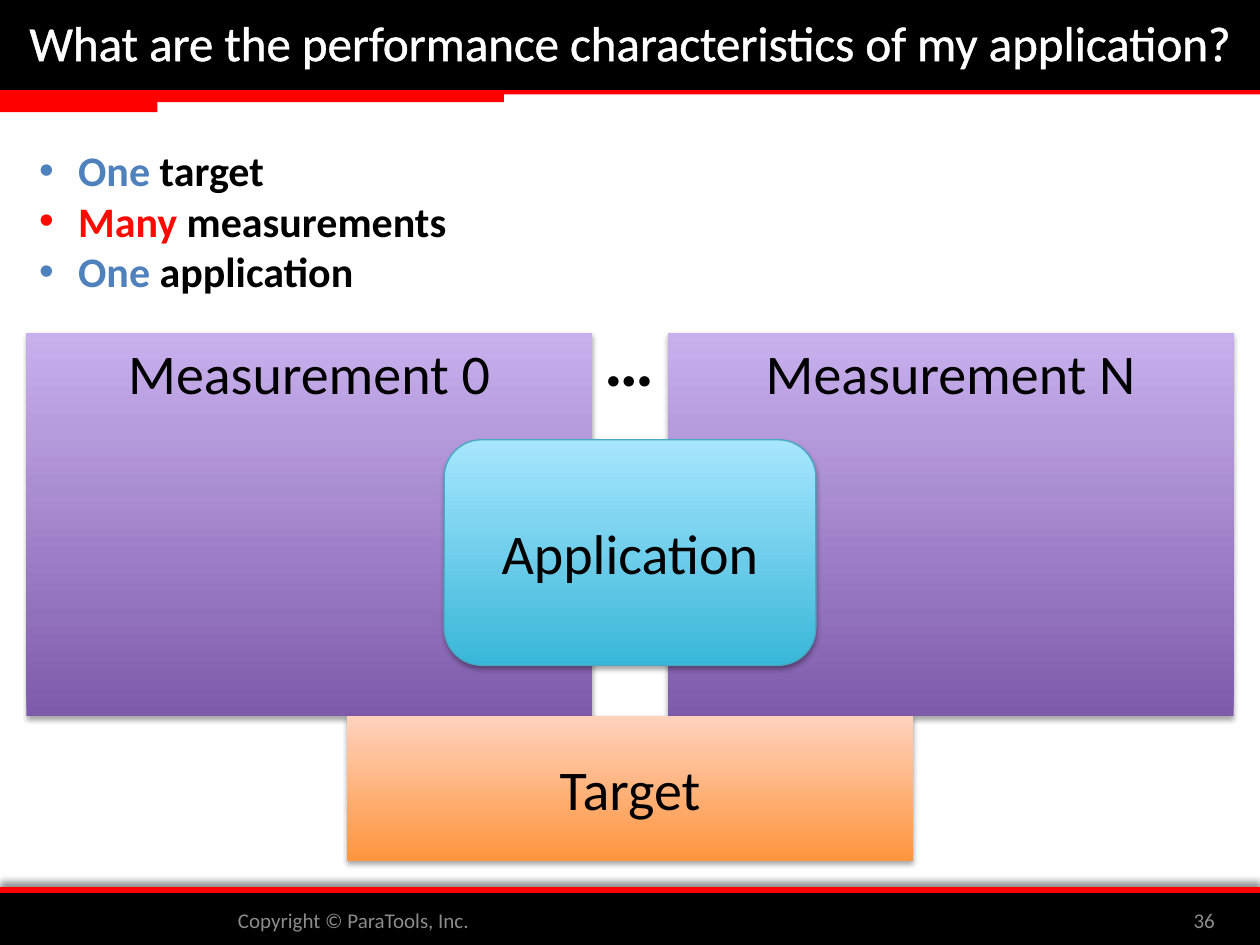
"""Build the slide on the performance characteristics of an application."""
from lxml import etree
from pptx import Presentation
from pptx.dml.color import RGBColor
from pptx.enum.shapes import MSO_SHAPE
from pptx.enum.text import MSO_ANCHOR, MSO_AUTO_SIZE, PP_ALIGN
from pptx.oxml.ns import qn
from pptx.util import Emu, Inches, Pt

RECT, ROUNDED = MSO_SHAPE.RECTANGLE, MSO_SHAPE.ROUNDED_RECTANGLE
TOP, MIDDLE = MSO_ANCHOR.TOP, MSO_ANCHOR.MIDDLE
LEFT, CENTER, RIGHT = PP_ALIGN.LEFT, PP_ALIGN.CENTER, PP_ALIGN.RIGHT
NO_FIT = MSO_AUTO_SIZE.NONE

BLACK = RGBColor(0x00, 0x00, 0x00)
WHITE = RGBColor(0xFF, 0xFF, 0xFF)
RED = RGBColor(0xFF, 0x00, 0x00)
MANY_RED = RGBColor(0xFF, 0x09, 0x00)
ONE_BLUE = RGBColor(0x4F, 0x81, 0xBD)
GRAY = RGBColor(0x8C, 0x8C, 0x8C)
TEAL = RGBColor(0x46, 0xAA, 0xC5)
PURPLES = RGBColor(0x7F, 0x5B, 0xAB), RGBColor(0xC8, 0xB0, 0xED)
ORANGES = RGBColor(0xFF, 0x95, 0x3E), RGBColor(0xFF, 0xD2, 0xBD)
CYANS = RGBColor(0x39, 0xB7, 0xD8), RGBColor(0xA7, 0xE6, 0xFF)

FONT = "Calibri"
WIDTH, HEIGHT = 10, 7.5
MARGIN = 0.21
BLOCK_WIDTH = 4.49
BLOCK_TOP, BLOCK_HEIGHT = 2.64, 3.04
BLOCK_BOTTOM = BLOCK_TOP + BLOCK_HEIGHT
HEADER_HEIGHT, FOOTER_HEIGHT = 0.7, 0.4
FOOTER_TOP = HEIGHT - FOOTER_HEIGHT


def style_run(run, size, color, bold=False):
    """Give a run its font, size, colour and weight."""
    run.font.name = FONT
    run.font.size = Pt(size)
    run.font.bold = bold
    run.font.color.rgb = color


def write(shape, text, size, color, align=CENTER, anchor=MIDDLE, bold=False):
    """Put one formatted line of text into a shape."""
    frame = shape.text_frame
    frame.text = text
    frame.word_wrap = True
    frame.vertical_anchor = anchor
    line = frame.paragraphs[0]
    line.alignment = align
    style_run(line.runs[0], size, color, bold)


def place(shape, left, top, width, height):
    """Move and size a placeholder."""
    shape.left, shape.top = Inches(left), Inches(top)
    shape.width, shape.height = Inches(width), Inches(height)


def add_shadow(shape, opacity, blur, distance, direction):
    """Add an outer shadow to a shape."""
    effects = shape.element.spPr.find(qn("a:effectLst"))
    shadow = etree.SubElement(
        effects, qn("a:outerShdw"), blurRad=str(Pt(blur)),
        dist=str(Pt(distance)), dir=str(direction * 60000), rotWithShape="0")
    color = etree.SubElement(shadow, qn("a:srgbClr"), val=str(BLACK))
    etree.SubElement(color, qn("a:alpha"), val=str(opacity * 1000))


def add_shape(slide, kind, left, top, width, height, outline=None, weight=2):
    """Add a preset shape with an optional outline and no shadow."""
    shape = slide.shapes.add_shape(
        kind, Inches(left), Inches(top), Inches(width), Inches(height))
    shape.shadow.inherit = False
    if outline is None:
        shape.line.fill.background()
    else:
        shape.line.color.rgb = outline
        shape.line.width = Pt(weight)
    return shape


def add_bar(slide, top, width, height, color, outline=None):
    """Add a plain bar that starts at the left edge."""
    bar = add_shape(slide, RECT, 0, top, width, height, outline)
    bar.fill.solid()
    bar.fill.fore_color.rgb = color
    return bar


def add_block(slide, label, colors, left, top, width, height,
              kind=RECT, anchor=MIDDLE, outline=None):
    """Add a labelled diagram block, shaded from bottom to top."""
    block = add_shape(slide, kind, left, top, width, height, outline, 0.75)
    block.fill.gradient()
    block.fill.gradient_angle = 90
    for stop, color, position in zip(block.fill.gradient_stops, colors, (0, 1)):
        stop.color.rgb = color
        stop.position = position
    add_shadow(block, 35, 3.1, 1.8, 90)
    write(block, label, 32, BLACK, anchor=anchor)


def add_label(slide, text, left, top, width, height, size, color, **layout):
    """Add a text box with one line."""
    box = slide.shapes.add_textbox(
        Inches(left), Inches(top), Inches(width), Inches(height))
    write(box, text, size, color, **layout)


def add_bands(slide):
    """Draw the header and footer bands."""
    footer_rule = add_bar(slide, FOOTER_TOP - 0.06, WIDTH, 0.11, RED)
    add_shadow(footer_rule, 43, 4, 3, 270)
    add_bar(slide, FOOTER_TOP, WIDTH, FOOTER_HEIGHT, BLACK, BLACK)
    for top, width, height in ((0.64, WIDTH, 0.11), (0.56, WIDTH / 8, 0.33),
                               (0.59, WIDTH * 0.4, 0.22)):
        add_bar(slide, top, width, height, RED)
    add_bar(slide, 0, WIDTH, HEADER_HEIGHT, BLACK, BLACK)


def fill_title(title, text):
    """Set the outlined title in front of the header band."""
    place(title, 0, -0.02, WIDTH, HEADER_HEIGHT)
    write(title, text, 28, WHITE)
    title.text_frame.auto_size = NO_FIT
    properties = title.text_frame.paragraphs[0].runs[0].font._element
    outline = etree.Element(qn("a:ln"), w=str(Emu(Pt(1.45))))
    paint = etree.SubElement(outline, qn("a:solidFill"))
    etree.SubElement(paint, qn("a:srgbClr"), val=str(WHITE))
    properties.insert(0, outline)
    title.element.getparent().append(title.element)


def fill_bullets(body, items):
    """Write bullets whose first word is coloured."""
    place(body, MARGIN, 1.1, 3.47, 1.31)
    frame = body.text_frame
    frame.auto_size = NO_FIT
    frame.vertical_anchor = TOP
    for number, (count, color, noun) in enumerate(items):
        bullet = frame.add_paragraph() if number else frame.paragraphs[0]
        properties = bullet._p.get_or_add_pPr()
        properties.set("marL", str(Inches(0.31)))
        properties.set("indent", str(Inches(-0.31)))
        bullet.space_before = Pt(0)
        for text, ink in ((count + " ", color), (noun, BLACK)):
            run = bullet.add_run()
            run.text = text
            style_run(run, 24, ink, bold=True)


def main():
    """Build and save the slide."""
    deck = Presentation()
    deck.slide_width, deck.slide_height = Inches(WIDTH), Inches(HEIGHT)
    slide = deck.slides.add_slide(deck.slide_layouts[1])
    title, body = slide.placeholders

    add_bands(slide)
    fill_title(title, "What are the performance characteristics of my application?")
    fill_bullets(body, (("One", ONE_BLUE, "target"),
                        ("Many", MANY_RED, "measurements"),
                        ("One", ONE_BLUE, "application")))

    for label, left in (("Measurement N", WIDTH - MARGIN - BLOCK_WIDTH),
                        ("Measurement 0", MARGIN)):
        add_block(slide, label, PURPLES, left, BLOCK_TOP, BLOCK_WIDTH,
                  BLOCK_HEIGHT, anchor=TOP)
    add_block(slide, "Target", ORANGES, (WIDTH - BLOCK_WIDTH) / 2, BLOCK_BOTTOM,
              BLOCK_WIDTH, 1.15)
    add_block(slide, "Application", CYANS, (WIDTH - 2.95) / 2, 3.49, 2.95, 1.79,
              kind=ROUNDED, outline=TEAL)
    add_label(slide, "…", MARGIN + BLOCK_WIDTH, 2.46, 0.6, 0.77, 40, BLACK,
              align=LEFT, anchor=TOP, bold=True)

    add_label(slide, "Copyright © ParaTools, Inc.", 1.79, FOOTER_TOP, 6.75,
              FOOTER_HEIGHT, 12, GRAY, align=LEFT)
    add_label(slide, "36", 8.75, FOOTER_TOP, 0.99, FOOTER_HEIGHT, 12, GRAY,
              align=RIGHT)
    deck.save("out.pptx")


if __name__ == "__main__":
    main()
